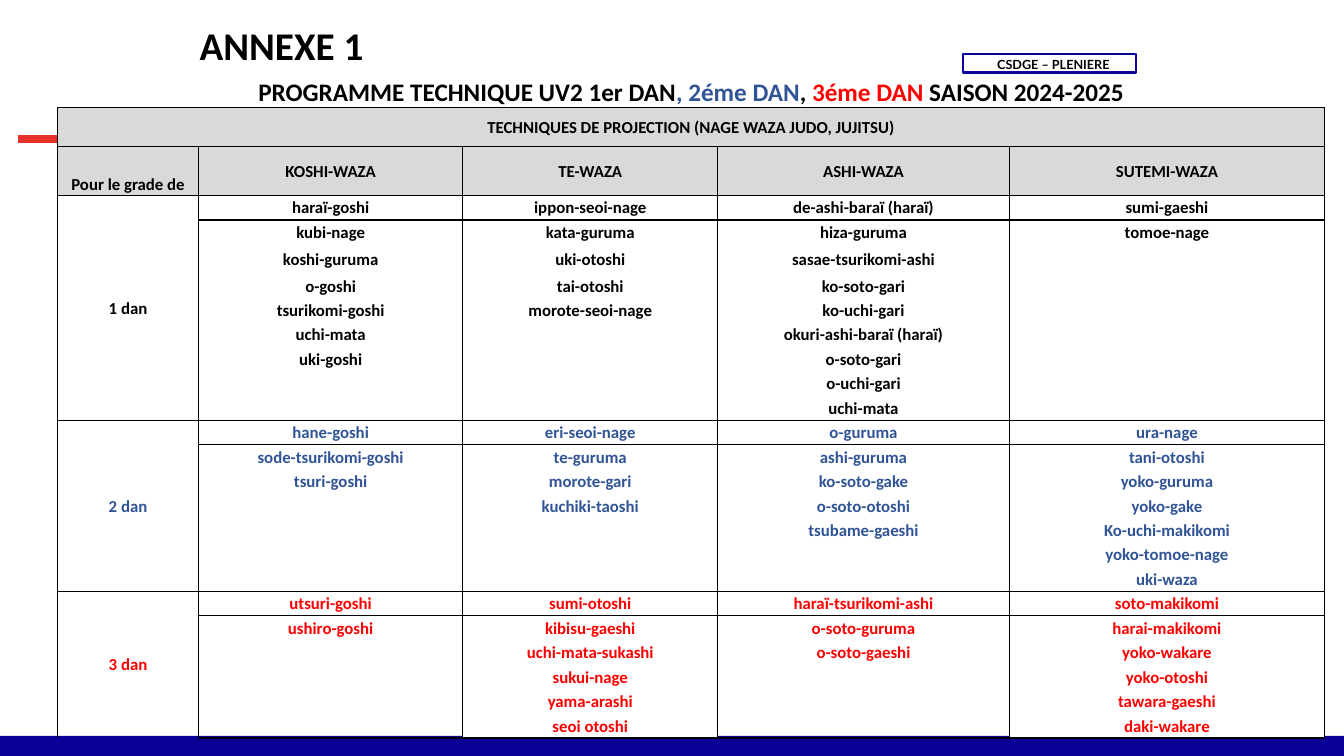
from dataclasses import dataclass
from itertools import zip_longest

from lxml.etree import SubElement
from pptx import Presentation
from pptx.dml.color import RGBColor
from pptx.enum.shapes import MSO_CONNECTOR, MSO_SHAPE
from pptx.enum.text import MSO_ANCHOR, PP_ALIGN
from pptx.oxml import parse_xml
from pptx.oxml.ns import nsdecls, qn
from pptx.table import Table, _Cell
from pptx.util import Inches, Pt

COLORS = {
    "black": "000000", "white": "FFFFFF", "grey": "D9D9D9",
    "blue": "305496", "red": "FF0000", "navy": "0A0096", "accent": "E7302A",
}
NO_STYLE = "{2D5ABB26-0587-4C30-8999-92F81FD0307C}"
TABLE_HEIGHT = 7.16
HEADING_HEIGHTS = [0.54, 0.36, 0.38, 0.49]
COLUMN_WIDTHS = [1.4, 2.62, 2.53, 2.89, 3.13]
TALL_ROW, TALL_HEIGHT = 6, 0.29
FAMILIES = ["KOSHI-WAZA", "TE-WAZA", "ASHI-WAZA", "SUTEMI-WAZA"]


@dataclass(frozen=True)
class Piece:
    text: str
    color: str = "black"


@dataclass(frozen=True)
class Grade:
    name: str
    color: str
    techniques: list[list[str]]  # one list for each family


PROGRAMME = [
    Piece("PROGRAMME TECHNIQUE UV2 1er DAN"),
    Piece(", 2éme DAN", "blue"),
    Piece(", "),
    Piece("3éme DAN ", "red"),
    Piece("SAISON 2024-2025"),
]
GRADES = [
    Grade("1 dan", "black", [
        ["haraï-goshi", "kubi-nage", "koshi-guruma", "o-goshi",
         "tsurikomi-goshi", "uchi-mata", "uki-goshi"],
        ["ippon-seoi-nage", "kata-guruma", "uki-otoshi", "tai-otoshi",
         "morote-seoi-nage"],
        ["de-ashi-baraï (haraï)", "hiza-guruma", "sasae-tsurikomi-ashi",
         "ko-soto-gari", "ko-uchi-gari", "okuri-ashi-baraï (haraï)",
         "o-soto-gari", "o-uchi-gari", "uchi-mata"],
        ["sumi-gaeshi", "tomoe-nage"],
    ]),
    Grade("2 dan", "blue", [
        ["hane-goshi", "sode-tsurikomi-goshi", "tsuri-goshi"],
        ["eri-seoi-nage", "te-guruma", "morote-gari", "kuchiki-taoshi"],
        ["o-guruma", "ashi-guruma", "ko-soto-gake", "o-soto-otoshi",
         "tsubame-gaeshi"],
        ["ura-nage", "tani-otoshi", "yoko-guruma", "yoko-gake",
         "Ko-uchi-makikomi", "yoko-tomoe-nage", "uki-waza"],
    ]),
    Grade("3 dan", "red", [
        ["utsuri-goshi", "ushiro-goshi"],
        ["sumi-otoshi", "kibisu-gaeshi", "uchi-mata-sukashi", "sukui-nage",
         "yama-arashi", "seoi otoshi"],
        ["haraï-tsurikomi-ashi", "o-soto-guruma", "o-soto-gaeshi"],
        ["soto-makikomi", "harai-makikomi", "yoko-wakare", "yoko-otoshi",
         "tawara-gaeshi", "daki-wakare"],
    ]),
]


def rgb(name: str) -> RGBColor:
    return RGBColor.from_string(COLORS[name])


def write(cell: _Cell, pieces: list[Piece], size: float = 12,
          anchor: MSO_ANCHOR = MSO_ANCHOR.MIDDLE,
          align: PP_ALIGN = PP_ALIGN.CENTER) -> None:
    cell.vertical_anchor = anchor
    paragraph = cell.text_frame.paragraphs[0]
    paragraph.alignment = align
    for piece in pieces:
        run = paragraph.add_run()
        run.text = piece.text
        run.font.name, run.font.size, run.font.bold = "Calibri", Pt(size), True
        run.font.color.rgb = rgb(piece.color)


def paint(cell: _Cell, color: str) -> None:
    cell.fill.solid()
    cell.fill.fore_color.rgb = rgb(color)


def border(cell: _Cell, sides: str, width: float = 1) -> None:
    """Draw black edges; sides is a subset of "LRTB", in that order."""
    properties = cell._tc.get_or_add_tcPr()
    for position, side in enumerate(sides):
        properties.insert(position, parse_xml(
            f'<a:ln{side} {nsdecls("a")} w="{Pt(width)}"><a:solidFill>'
            f'<a:srgbClr val="{COLORS["black"]}"/></a:solidFill></a:ln{side}>'))


def prepare(table: Table) -> None:
    table.first_row = table.horz_banding = False
    table._tbl.tblPr.find(qn("a:tableStyleId")).text = NO_STYLE
    for column, width in zip(table.columns, COLUMN_WIDTHS):
        column.width = Inches(width)
    regular_rows = len(table.rows) - len(HEADING_HEIGHTS) - 1
    regular = (TABLE_HEIGHT - sum(HEADING_HEIGHTS) - TALL_HEIGHT) / regular_rows
    for index, row in enumerate(table.rows):
        height = TALL_HEIGHT if index == TALL_ROW else regular
        if index < len(HEADING_HEIGHTS):
            height = HEADING_HEIGHTS[index]
        row.height = Inches(height)
        for cell in row.cells:
            cell.margin_left = cell.margin_right = cell.margin_top = Inches(0.01)
            cell.margin_bottom = 0
            cell.fill.background()
            # Small type keeps empty rows from growing
            SubElement(cell.text_frame.paragraphs[0]._p,
                       qn("a:endParaRPr"), sz="1200")


def fill_headings(table: Table) -> None:
    write(table.cell(0, 1), [Piece("ANNEXE 1")], 28, MSO_ANCHOR.BOTTOM, PP_ALIGN.LEFT)
    for row in (1, 2):
        table.cell(row, 0).merge(table.cell(row, len(FAMILIES)))
    write(table.cell(1, 0), PROGRAMME, 18, MSO_ANCHOR.BOTTOM)
    write(table.cell(2, 0), [Piece("TECHNIQUES DE PROJECTION (NAGE WAZA JUDO, JUJITSU)")])
    for column in range(len(COLUMN_WIDTHS)):
        border(table.cell(1, column), "B")
        paint(table.cell(2, column), "grey")
        border(table.cell(2, column), "LRTB")
    write(table.cell(3, 0), [Piece("Pour le grade de")], anchor=MSO_ANCHOR.BOTTOM)
    for column, family in enumerate(FAMILIES, 1):
        write(table.cell(3, column), [Piece(family)])
    for column in range(len(COLUMN_WIDTHS)):
        paint(table.cell(3, column), "grey")
        border(table.cell(3, column), "LRTB")


def fill_grade(table: Table, grade: Grade, top: int) -> int:
    """Fill one grade from row top and return the row that follows it."""
    lines = list(zip_longest(*grade.techniques, fillvalue=""))
    bottom = top + len(lines) - 1
    table.cell(top, 0).merge(table.cell(bottom, 0))
    write(table.cell(top, 0), [Piece(grade.name, grade.color)])
    for row, line in enumerate(lines, top):
        sides = "LR" + "T" * (row == top) + "B" * (row == bottom)
        border(table.cell(row, 0), sides)
        for column, technique in enumerate(line, 1):
            cell = table.cell(row, column)
            if technique:
                write(cell, [Piece(technique, grade.color)])
                paint(cell, "white")
            border(cell, sides)
    return bottom + 1


def main() -> None:
    presentation = Presentation()
    presentation.slide_width, presentation.slide_height = Inches(13.33), Inches(7.5)
    slide = presentation.slides.add_slide(presentation.slide_layouts[6])
    shapes = slide.shapes

    # Footer band
    band = shapes.add_shape(MSO_SHAPE.RECTANGLE, Inches(-0.08), Inches(7.3),
                            Inches(13.46), Inches(0.29))
    band.shadow.inherit = False
    band.fill.solid()
    band.fill.fore_color.rgb = rgb("navy")
    band.line.fill.background()

    # Committee badge
    badge = shapes.add_shape(MSO_SHAPE.RECTANGLE, Inches(9.55), Inches(0.54),
                             Inches(1.72), Inches(0.18))
    badge.shadow.inherit = False
    badge.fill.background()
    badge.line.color.rgb, badge.line.width = rgb("navy"), Pt(1.5)
    frame = badge.text_frame
    frame.margin_left = frame.margin_right = frame.margin_top = frame.margin_bottom = 0
    frame.text = "CSDGE – PLENIERE"
    committee = frame.paragraphs[0]
    committee.alignment, committee.line_spacing = PP_ALIGN.LEFT, 1.15
    indents = committee._p.get_or_add_pPr()
    indents.set("marL", str(Inches(0.67)))
    indents.set("indent", str(Inches(-0.33)))
    font = committee.runs[0].font
    font.name, font.size, font.bold = "Lato", Pt(9), True
    font.color.rgb = rgb("black")

    # Red accent
    accent = shapes.add_connector(MSO_CONNECTOR.STRAIGHT, Inches(0.18), Inches(1.38),
                                  Inches(0.85), Inches(1.38))
    accent.line.color.rgb, accent.line.width = rgb("accent"), Pt(6)
    SubElement(accent._element.spPr, qn("a:effectLst"))

    # Technique table
    row_count = len(HEADING_HEIGHTS) + sum(
        max(map(len, grade.techniques)) for grade in GRADES)
    table = shapes.add_table(row_count, len(COLUMN_WIDTHS), Inches(0.57), Inches(0.17),
                             Inches(sum(COLUMN_WIDTHS)), Inches(TABLE_HEIGHT)).table
    prepare(table)
    fill_headings(table)
    top = len(HEADING_HEIGHTS)
    for grade in GRADES:
        top = fill_grade(table, grade, top)

    presentation.save("out.pptx")


if __name__ == "__main__":
    main()
